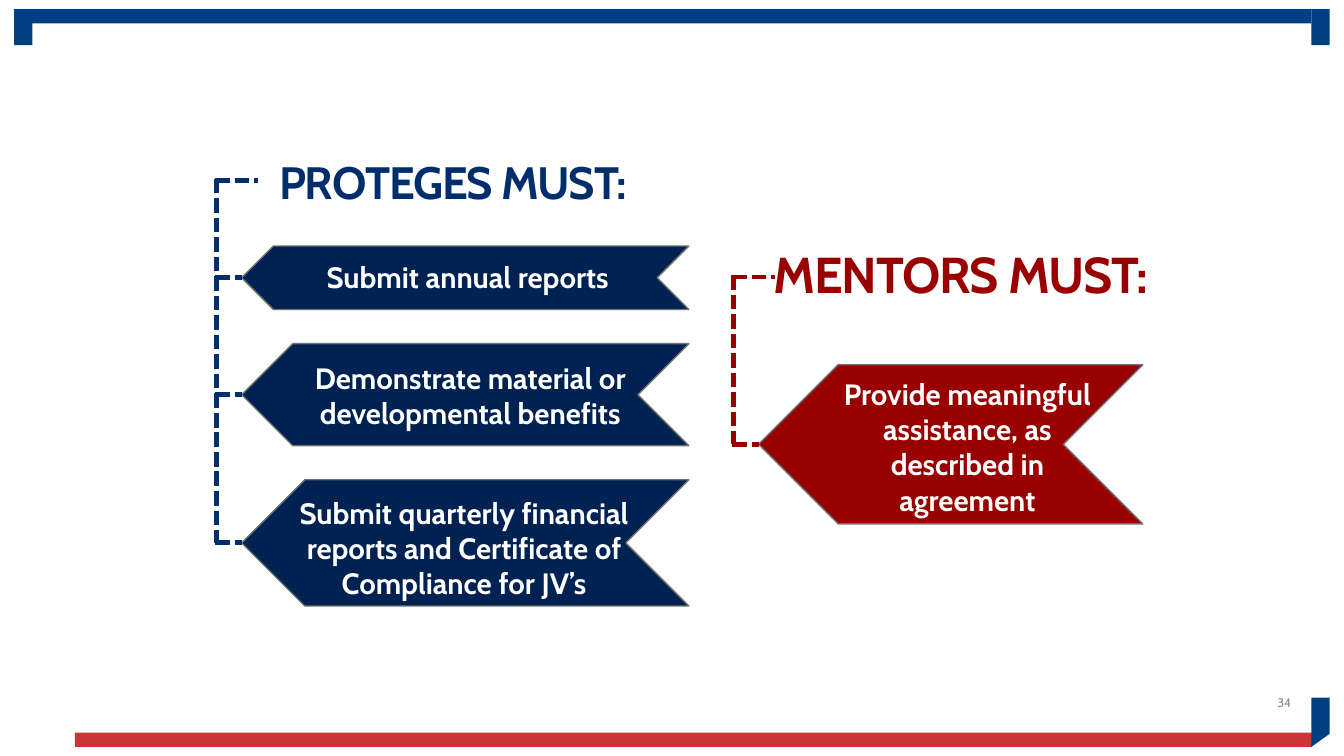
from lxml import etree
from pptx import Presentation
from pptx.dml.color import RGBColor
from pptx.enum.dml import MSO_LINE
from pptx.enum.shapes import MSO_CONNECTOR, MSO_SHAPE
from pptx.enum.text import MSO_ANCHOR, PP_ALIGN
from pptx.oxml.ns import qn
from pptx.util import Cm, Pt

RECT, CHEVRON = MSO_SHAPE.RECTANGLE, MSO_SHAPE.CHEVRON
STRAIGHT, DOTS = MSO_CONNECTOR.STRAIGHT, MSO_LINE.SQUARE_DOT
LEFT, MID, RIGHT = PP_ALIGN.LEFT, PP_ALIGN.CENTER, PP_ALIGN.RIGHT
TOP, CENTER = MSO_ANCHOR.TOP, MSO_ANCHOR.MIDDLE

FONT = "Cabin"
WHITE = RGBColor(0xFF, 0xFF, 0xFF)
BLUE = RGBColor(0x00, 0x3F, 0x80)
RED = RGBColor(0xCC, 0x35, 0x38)
NAVY = RGBColor(0x00, 0x2E, 0x6D)
DARK = RGBColor(0x00, 0x22, 0x52)
WINE = RGBColor(0x99, 0x00, 0x00)
EDGE = RGBColor(0x6F, 0x6F, 0x6F)
GRAY = RGBColor(0x8D, 0x8D, 0x8E)

INDENT = 0.63  # from spine to arrow tips

# words, arrow top and height, text left, drop and width, alignment
PROTEGE = [
    ("Submit annual reports", 1.7, 1.6, 2.52, 0.2, 7.92, LEFT),
    ("Demonstrate material or developmental benefits",
     4.16, 2.57, 1.93, 0.28, 8.92, MID),
    ("Submit quarterly financial reports and Certificate of "
     "Compliance for JV’s", 7.59, 3.18, 1.6, 0.25, 9.27, MID),
]
MENTOR = [
    ("Provide meaningful assistance, as described in agreement",
     2.26, 4.01, 2.31, 0.16, 7.16, MID),
]


def paint(shape, fill, edge=None):
    shape.shadow.inherit = False
    shape.fill.solid()
    shape.fill.fore_color.rgb = fill
    if edge is None:
        shape.line.fill.background()
    else:
        shape.line.color.rgb = edge
        shape.line.width = Pt(1)


def block(slide, kind, box, fill, edge=None):
    shape = slide.shapes.add_shape(kind, *map(Cm, box))
    paint(shape, fill, edge)
    return shape


def write(slide, box, words, size, color, align=MID, bold=True, anchor=TOP):
    frame = slide.shapes.add_textbox(*map(Cm, box)).text_frame
    frame.word_wrap = True
    frame.vertical_anchor = anchor
    frame.text = words
    para = frame.paragraphs[0]
    para.alignment = align
    font = para.runs[0].font
    font.name, font.size, font.bold = FONT, Pt(size), bold
    font.color.rgb = color
    return frame


def head(slide, box, words, size, color):
    """Write a column heading with tight line and letter spacing."""
    frame = write(slide, box, words, size, color)
    frame.margin_left = frame.margin_right = Cm(0.18)
    frame.margin_top = frame.margin_bottom = Cm(0.1)
    para = frame.paragraphs[0]
    para.line_spacing = 0.9
    para.runs[0]._r.get_or_add_rPr().set("spc", "-80")


def dots(slide, start, end, color):
    line = slide.shapes.add_connector(STRAIGHT, *map(Cm, start + end))
    line.line.color.rgb = color
    line.line.width = Pt(3.5)
    line.line.dash_style = DOTS
    etree.SubElement(line._element.spPr, qn("a:effectLst"))


def column(slide, box, title, size, title_box, items, color, fill):
    """Draw a heading, its arrows and the dotted tree that joins them."""
    left, top, width = box
    dx, dy, wide, high = title_box
    head(slide, (left + dx, top + dy, wide, high), title, size, color)
    mids = []
    for words, down, tall, inset, drop, span, align in items:
        y = top + down
        arrow = block(slide, CHEVRON,
                      (left + INDENT, y, width - INDENT, tall), fill, EDGE)
        arrow.rotation = 180
        write(slide, (left + inset, y + drop, span, tall - drop),
              words, 21, WHITE, align)
        mids.append(y + tall / 2)
    start = left - 0.04
    dots(slide, (start, top + 0.05), (left + 1.04, top + 0.05), color)
    dots(slide, (left, top), (left, mids[-1]), color)
    for y in mids:
        dots(slide, (start, y), (left + INDENT, y), color)


def border(slide, box):
    """Draw the bars and folded corner along the slide's edges."""
    left, top, right, low = box
    block(slide, RECT, (left, top, right - left - 0.46, 0.36), BLUE)
    for x in (left, right - 0.46):
        block(slide, RECT, (x, top, 0.46, 0.91), BLUE)
    block(slide, RECT, (left + 1.53, low - 0.36, 31.17, 0.36), RED)
    edge = right - 0.46
    form = slide.shapes.build_freeform(Cm(edge), Cm(low - 1.24))
    points = [(right, low - 1.24), (right, low - 0.33), (edge, low)]
    form.add_line_segments([(Cm(x), Cm(y)) for x, y in points])
    paint(form.convert_to_shape(), BLUE)


def main():
    deck = Presentation()
    deck.slide_width, deck.slide_height = Cm(33.87), Cm(19.05)
    slide = deck.slides.add_slide(deck.slide_layouts[6])
    border(slide, (0.36, 0.23, 33.51, 18.82))
    column(slide, (5.46, 4.5, 11.9), "PROTEGES MUST:", 32.4,
           (0.46, -0.56, 11, 1.57), PROTEGE, NAVY, DARK)
    column(slide, (18.49, 6.93, 10.31), "MENTORS MUST:", 36,
           (0.23, -0.73, 11, 1.96), MENTOR, WINE, WINE)
    write(slide, (25.17, 17.2, 7.62, 1.02), "34", 9, GRAY, RIGHT,
          False, CENTER)
    deck.save("out.pptx")


if __name__ == "__main__":
    main()
